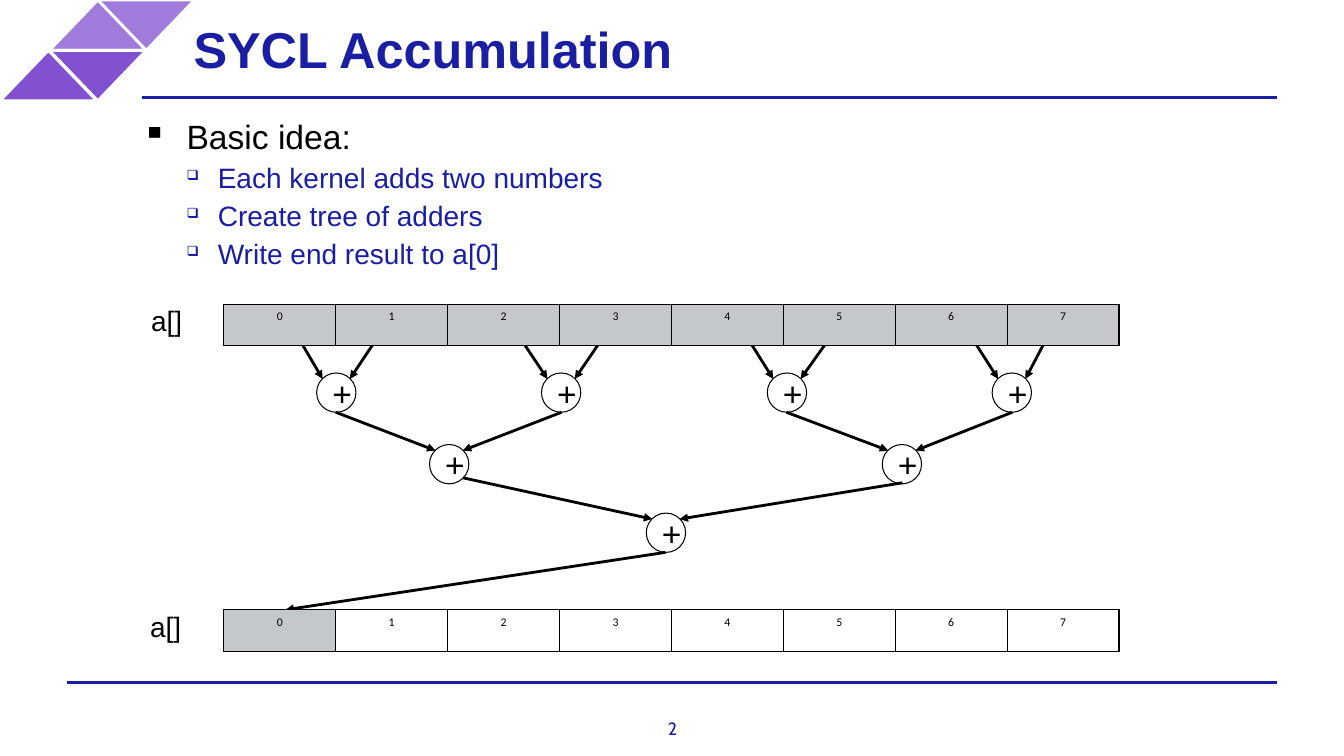
"""Build the slide on adding an array with a tree of kernels."""
from lxml import etree
from pptx import Presentation
from pptx import util as u
from pptx.dml.color import RGBColor
from pptx.enum import shapes, text
from pptx.oxml.ns import qn

NAVY = RGBColor(0x19, 0x1E, 0xA2)
BLACK = RGBColor(0, 0, 0)
WHITE = RGBColor(0xFF, 0xFF, 0xFF)
GRAY = RGBColor(0xC4, 0xC8, 0xCB)
LILAC = RGBColor(0xA0, 0x7B, 0xDB)
PURPLE = RGBColor(0x81, 0x51, 0xCF)

TITLE = "SYCL Accumulation"
POINTS = [("Basic idea:", 0), ("Each kernel adds two numbers", 1),
          ("Create tree of adders", 1), ("Write end result to a[0]", 1)]
LEVELS = [
    dict(left=0.5, first=-0.44, sign="▪", scale=100, before=6,
         font=dict(name="Arial", size=u.Pt(24), color=BLACK)),
    dict(left=0.81, first=-0.31, sign="❑", scale=50, before=3,
         font=dict(name="Arial", size=u.Pt(20), color=NAVY)),
]
PLUS = dict(name="Arial", size=u.Pt(24), color=BLACK)
LABEL = dict(name="Arial", size=u.Pt(20), color=BLACK)
DIGIT = dict(name="Calibri", size=u.Pt(8.4), color=BLACK)
HEAD = dict(name="Arial", size=u.Pt(36), color=NAVY, bold=True)
PAGE = dict(name="Cabin", size=u.Pt(12.7), color=NAVY)

RULES = [(0.66, 6.77), (1.41, 0.97)]
WEDGES = [(0.97, 0, 180, LILAC), (0.49, 0, 0, LILAC),
          (0.49, 0.5, 180, PURPLE), (0, 0.5, 0, PURPLE)]
ROWS = [(3.02, 8, 1.05), (6.05, 1, 1.04)]
CELLS = 8
CELL_W, CELL_H, ROW_X = 1.11, 0.41, 2.22
RING = 0.39
EDGE = 0.06
ADDERS = [
    (3.14, 3.7, (2.83, 3.13), (3.89, 3.13)),
    (5.37, 3.7, (5.01, 3.13), (6.13, 3.13)),
    (7.61, 3.7, (7.28, 3.14), (8.41, 3.1)),
    (9.84, 3.7, (9.48, 3.1), (10.5, 3.13)),
    (4.26, 4.41, (3.33, 4.09), (5.57, 4.09)),
    (8.75, 4.41, (7.8, 4.09), (10.04, 4.09)),
    (6.41, 5.09, (4.59, 4.74), (8.95, 4.79)),
]
RESULT = ((6.6, 5.48), (2.83, 6.05))


def style(item, values):
    for key, value in values.items():
        if key == "color":
            item.color.rgb = value
        else:
            setattr(item, key, value)


def write(para, words, font):
    run = para.add_run()
    run.text = words
    style(run.font, font)


def add_box(slide, area, inset=0, **frame):
    box = slide.shapes.add_textbox(*map(u.Inches, area)).text_frame
    sides = ("margin_left", "margin_top", "margin_right", "margin_bottom")
    style(box, {"word_wrap": True, **dict.fromkeys(sides, u.Inches(inset)), **frame})
    return box


def add_line(slide, start, end, color, arrow=False):
    line = slide.shapes.add_connector(
        shapes.MSO_CONNECTOR.STRAIGHT, *map(u.Inches, (*start, *end)))
    style(line.line, dict(color=color, width=u.Pt(2)))
    if arrow:
        etree.SubElement(line.line._get_or_add_ln(), qn("a:tailEnd"), type="triangle")
    etree.SubElement(line._element.spPr, qn("a:effectLst"))


def add_wedge(slide, x, y, turn, color):
    wedge = slide.shapes.add_shape(
        shapes.MSO_SHAPE.ISOSCELES_TRIANGLE, *map(u.Inches, (x, y, 0.96, 0.5)))
    wedge.rotation = turn
    wedge.shadow.inherit = False
    wedge.fill.solid()
    wedge.fill.fore_color.rgb = color
    style(wedge.line, dict(color=WHITE, width=u.Pt(2)))


def add_ring(slide, x, y):
    ring = slide.shapes.add_shape(
        shapes.MSO_SHAPE.OVAL, *map(u.Inches, (x, y, RING, RING)))
    ring.shadow.inherit = False
    ring.fill.background()
    style(ring.line, dict(color=BLACK, width=u.Pt(0.75)))
    ring.text_frame.vertical_anchor = text.MSO_ANCHOR.MIDDLE
    para = ring.text_frame.paragraphs[0]
    para.alignment = text.PP_ALIGN.LEFT
    write(para, "+", PLUS)


def add_border(cell):
    props = cell._tc.get_or_add_tcPr()
    for spot, side in enumerate(("lnL", "lnR", "lnT", "lnB")):
        edge = etree.Element(qn("a:" + side), w=str(u.Pt(1)))
        fill = etree.SubElement(edge, qn("a:solidFill"))
        etree.SubElement(fill, qn("a:srgbClr"), val=str(BLACK))
        props.insert(spot, edge)


def add_row(slide, y, filled, label_x):
    area = (ROW_X, y, CELLS * CELL_W, CELL_H)
    table = slide.shapes.add_table(1, CELLS, *map(u.Inches, area)).table
    style(table, dict(first_row=False, horz_banding=False))
    for index in range(CELLS):
        cell = table.cell(0, index)
        if index < filled:
            cell.fill.solid()
            cell.fill.fore_color.rgb = GRAY
        else:
            cell.fill.background()
        add_border(cell)
        para = cell.text_frame.paragraphs[0]
        para.alignment = text.PP_ALIGN.CENTER
        write(para, str(index), DIGIT)
    label = add_box(slide, (label_x, y, 0.87, 0.38), margin_left=u.Inches(0.1),
                    margin_top=u.Inches(0.05), margin_bottom=u.Inches(0.05),
                    auto_size=text.MSO_AUTO_SIZE.SHAPE_TO_FIT_TEXT)
    para = label.paragraphs[0]
    style(para, dict(level=2, line_spacing=u.Pt(20)))
    style_indent(para, 0, 0.35)
    write(para, "a[]", LABEL)


def style_indent(para, left, first):
    props = para._p.get_or_add_pPr()
    props.set("marL", str(u.Inches(left)))
    props.set("indent", str(u.Inches(first)))
    return props


def add_points(slide):
    box = add_box(slide, (1.35, 1.15, 9.75, 5.55))
    for index, (words, level) in enumerate(POINTS):
        look = LEVELS[level]
        para = box.add_paragraph() if index else box.paragraphs[0]
        para.level = level
        props = style_indent(para, look["left"], look["first"])
        etree.SubElement(props, qn("a:buSzPct"), val=str(look["scale"] * 1000))
        etree.SubElement(props, qn("a:buChar"), char=look["sign"])
        if index:
            para.space_before = u.Pt(look["before"])
        write(para, words, look["font"])


def main():
    deck = Presentation()
    deck.slide_width, deck.slide_height = u.Inches(13.33), u.Inches(7.5)
    slide = deck.slides.add_slide(deck.slide_layouts[6])
    for wedge in WEDGES:
        add_wedge(slide, *wedge)
    for x, y in RULES:
        add_line(slide, (x, y), (12.67, y), NAVY)
    title = add_box(slide, (1.78, 0, 7.99, 0.95), 0.14,
                    vertical_anchor=text.MSO_ANCHOR.MIDDLE)
    write(title.paragraphs[0], TITLE, HEAD)
    page = add_box(slide, (6.62, 7.12, 0.1, 0.21), word_wrap=False,
                   auto_size=text.MSO_AUTO_SIZE.SHAPE_TO_FIT_TEXT)
    page.paragraphs[0].alignment = text.PP_ALIGN.CENTER
    write(page.paragraphs[0], "2", PAGE)
    for x, y, left, right in ADDERS:
        add_ring(slide, x, y)
        add_line(slide, left, (x + EDGE, y + EDGE), BLACK, True)
        add_line(slide, right, (x + RING - EDGE, y + EDGE), BLACK, True)
    add_line(slide, *RESULT, BLACK, True)
    for row in ROWS:
        add_row(slide, *row)
    add_points(slide)
    deck.save("out.pptx")


if __name__ == "__main__":
    main()
